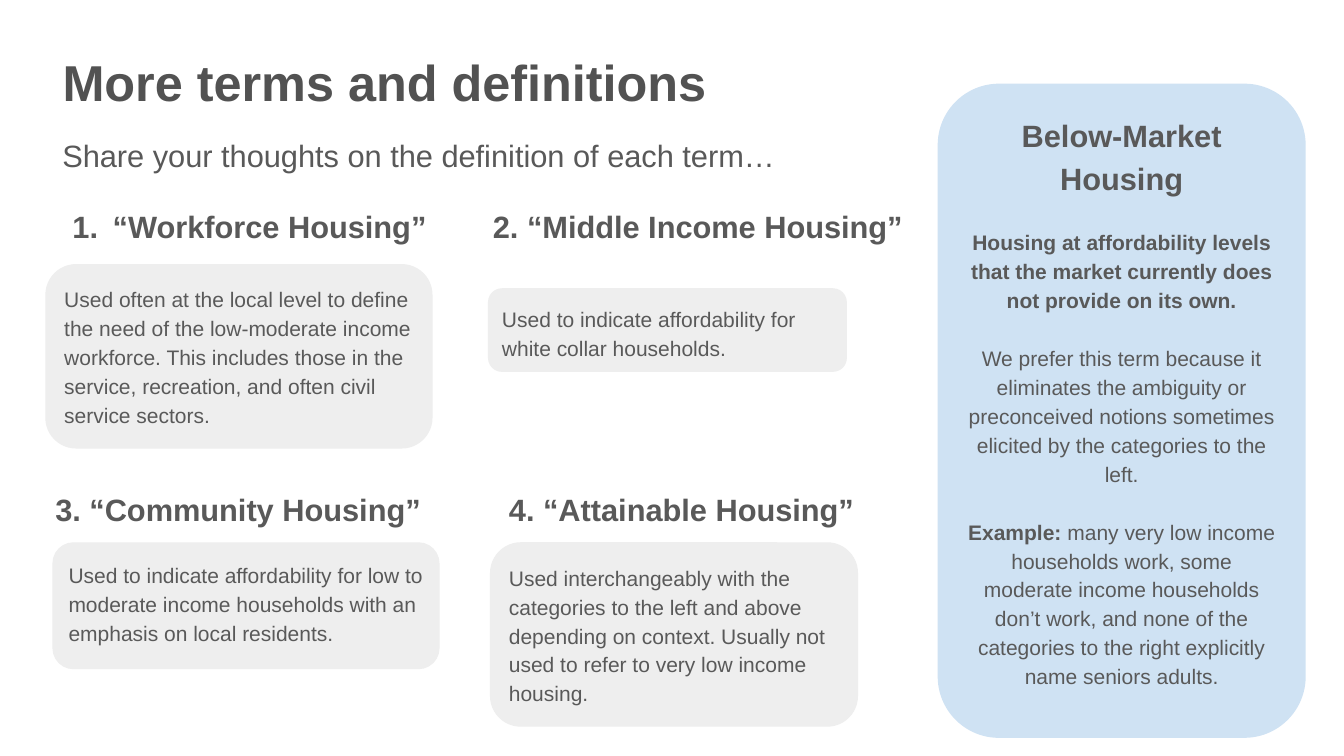
from dataclasses import dataclass

from lxml.etree import SubElement
from pptx import Presentation
from pptx.dml.color import RGBColor as Color
from pptx.enum.shapes import MSO_SHAPE as Shape
from pptx.enum.text import MSO_ANCHOR as Anchor, MSO_AUTO_SIZE as Auto, PP_ALIGN as Align
from pptx.oxml.ns import qn
from pptx.util import Emu, Pt


@dataclass(frozen=True)
class Theme:
    font: str = "Arial"
    ink: str = "595959"
    dark: str = "525252"
    grey: str = "EEEEEE"
    blue: str = "CFE2F3"
    title: int = 36
    head: int = 22
    body: int = 15
    gap: float = 20.7


THEME = Theme()
SCALE = 9144  # EMU in one px, at 100 px to the inch

# Heading, heading place, definition, card place
TERMS = [
    ("“Workforce Housing”", (52, 191, 384, 57),
     "Used often at the local level to define the need of the low-moderate income "
     "workforce. This includes those in the service, recreation, and often civil "
     "service sectors.", (45, 262, 384, 183)),
    ("2. “Middle Income Housing”", (479, 191, 428, 57),
     "Used to indicate affordability for white collar households.",
     (484, 286, 356, 83)),
    ("3. “Community Housing”", (45, 471, 384, 57),
     "Used to indicate affordability for low to moderate income households with "
     "an emphasis on local residents.", (52, 538, 384, 126)),
    ("4. “Attainable Housing”", (495, 471, 397, 57),
     "Used interchangeably with the categories to the left and above depending on "
     "context. Usually not used to refer to very low income housing.",
     (486, 538, 365, 183)),
]


def px(num):
    return Emu(num * SCALE)


def place(at):
    return [px(num) for num in at]


def setup(frame, side=10, edge=10, anchor=Anchor.TOP, auto=Auto.NONE):
    frame.word_wrap = True
    frame.auto_size = auto
    frame.vertical_anchor = anchor
    frame.margin_left = frame.margin_right = px(side)
    frame.margin_top = frame.margin_bottom = px(edge)
    return frame


def number(para):
    """Turn the paragraph into an automatically numbered item."""
    props = para._p.get_or_add_pPr()
    props.set("marL", str(px(50)))
    props.set("indent", str(px(-40)))
    tint = SubElement(props, qn("a:buClr"))
    SubElement(tint, qn("a:srgbClr"), val=THEME.ink)
    SubElement(props, qn("a:buAutoNum"), type="arabicPeriod")


def write(para, text, size=THEME.body, bold=False, ink=THEME.ink,
          align=Align.LEFT, line=1.15, before=0):
    para.alignment = align
    para.line_spacing = line
    para.space_before = Pt(before)
    run = para.add_run()
    run.text = text
    font = run.font
    font.name, font.size, font.bold = THEME.font, Pt(size), bold
    font.color.rgb = Color.from_string(ink)


def label(slide, text, at, bold=False, count=False):
    box = slide.shapes.add_textbox(*place(at))
    para = setup(box.text_frame, auto=Auto.SHAPE_TO_FIT_TEXT).paragraphs[0]
    if count:
        number(para)
    write(para, text, size=THEME.head, bold=bold)


def card(slide, at, fill):
    """Draw a rounded panel and return its text frame."""
    box = slide.shapes.add_shape(Shape.ROUNDED_RECTANGLE, *place(at))
    box.shadow.inherit = False
    box.fill.solid()
    box.fill.fore_color.rgb = Color.from_string(fill)
    box.line.fill.background()
    return setup(box.text_frame)


def panel(slide):
    frame = card(slide, (930, 83, 365, 649), THEME.blue)
    mid = Align.CENTER
    write(frame.paragraphs[0], "Below-Market Housing", size=THEME.head,
          bold=True, align=mid)
    write(frame.add_paragraph(), "Housing at affordability levels that the market "
          "currently does not provide on its own.", bold=True, align=mid,
          before=THEME.gap)
    write(frame.add_paragraph(), "We prefer this term because it eliminates the "
          "ambiguity or preconceived notions sometimes elicited by the categories "
          "to the left.", align=mid, before=THEME.gap)
    last = frame.add_paragraph()
    write(last, "Example:", bold=True, align=mid, before=THEME.gap)
    write(last, " many very low income households work, some moderate income "
          "households don’t work, and none of the categories to the right "
          "explicitly name seniors adults.", align=mid, before=THEME.gap)


def title(slide, text, at):
    head = slide.shapes.title
    head.left, head.top, head.width, head.height = place(at)
    frame = setup(head.text_frame, edge=5, anchor=Anchor.MIDDLE)
    write(frame.paragraphs[0], text, size=THEME.title, bold=True,
          ink=THEME.dark, line=0.9)


def main():
    deck = Presentation()
    deck.slide_width, deck.slide_height = px(1333), px(750)
    slide = deck.slides.add_slide(deck.slide_layouts.get_by_name("Title Only"))
    title(slide, "More terms and definitions", (52, 12, 677, 145))
    label(slide, "Share your thoughts on the definition of each term…",
          (52, 120, 750, 57))
    for rank, (name, spot, text, at) in enumerate(TERMS):
        write(card(slide, at, THEME.grey).paragraphs[0], text)
        label(slide, name, spot, bold=True, count=rank == 0)
    panel(slide)
    deck.save("out.pptx")


if __name__ == "__main__":
    main()
